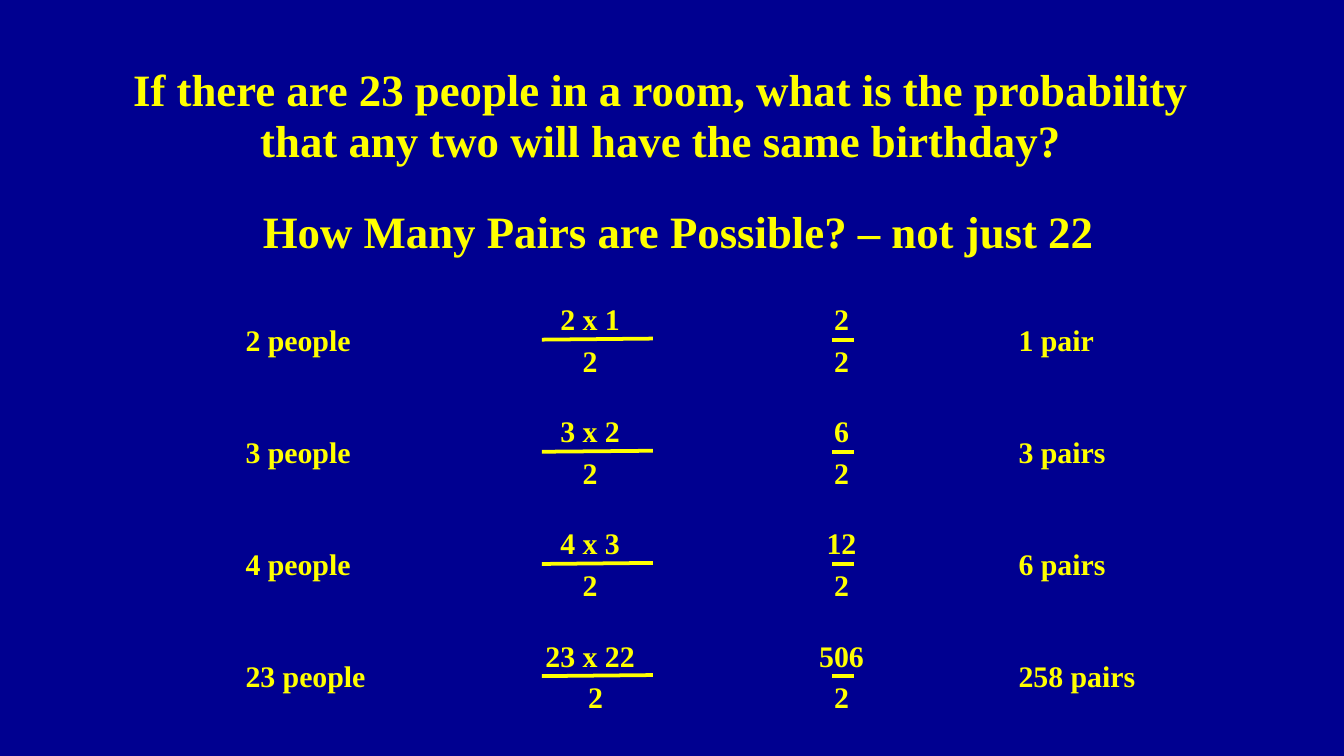
from lxml.etree import SubElement
from pptx import Presentation
from pptx.dml.color import RGBColor
from pptx.enum.shapes import MSO_CONNECTOR as Link
from pptx.enum.text import MSO_AUTO_SIZE as Fit, PP_ALIGN as Align
from pptx.oxml.ns import qn
from pptx.util import Cm, Pt

FONT = "Times New Roman"
BLUE, GOLD = "000090", "FFFF00"
EMS = {" ": 0.25, "l": 0.28, "i": 0.28, "r": 0.44, "e": 0.44, "s": 0.39, "p": 0.56}
LINE = 0.94
PITCH = 2.12
ROWS = [
    ("2 people", "2 x 1", "2", "1 pair", 0),
    ("3 people", "3 x 2", "6", "3 pairs", 0),
    ("4 people", "4 x 3", "12", "6 pairs", 0),
    ("23 people", "23 x 22", "506", "258 pairs", 0.1),
]


def tint(code):
    """Turn a hex string into a colour."""
    return RGBColor.from_string(code)


def span(text):
    """Return the width in cm of a 16 pt label with its insets."""
    return 0.51 + 0.564 * sum(EMS.get(mark, 0.5) for mark in text)


def write(slide, text, box, size, wrap=False):
    """Add a bold gold text box and return its paragraph."""
    frame = slide.shapes.add_textbox(*map(Cm, box)).text_frame
    frame.word_wrap = wrap
    frame.auto_size = Fit.SHAPE_TO_FIT_TEXT
    para = frame.paragraphs[0]
    para.text = text
    font = para.font
    font.name, font.size, font.bold = FONT, Pt(size), True
    font.color.rgb = tint(GOLD)
    return para


def title(slide, text, box):
    """Add a centred heading in the box."""
    para = write(slide, text, box, 24, True)
    para.alignment = Align.CENTER
    para.line_spacing = 0.95


def label(slide, text, left, top):
    """Add a one-line label at its left edge."""
    write(slide, text, (left, top, span(text), LINE), 16)


def ratio(slide, over, under, box, mid, shift=0, rise=0):
    """Stack a fraction around mid, with a bar as wide as the box."""
    left, top, width = box
    label(slide, over, mid - span(over) / 2, top)
    label(slide, under, mid + shift - span(under) / 2, top + 0.79)
    ends = (left, top + 0.86, left + width, top + 0.86 - rise)
    bar = slide.shapes.add_connector(Link.STRAIGHT, *map(Cm, ends))
    bar.line.color.rgb = tint(GOLD)
    bar.line.width = Pt(2)
    SubElement(bar._element.spPr, qn("a:effectLst"))


def row(slide, data, left, top):
    """Lay out one line of the pair count."""
    people, product, total, pairs, shift = data
    label(slide, people, left, top + 0.39)
    ratio(slide, product, "2", (left + 5.85, top, 2.1), left + 6.77, shift, 0.02)
    ratio(slide, total, "2", (left + 11.33, top, 0.43), left + 11.52)
    label(slide, pairs, left + 14.61, top + 0.39)


def main():
    """Build and save the slide."""
    deck = Presentation()
    deck.slide_width, deck.slide_height = Cm(25.4), Cm(14.29)
    slide = deck.slides.add_slide(deck.slide_layouts[6])
    fill = slide.background.fill
    fill.solid()
    fill.fore_color.rgb = tint(BLUE)
    title(
        slide,
        "If there are 23 people in a room, what is the probability "
        "that any two will have the same birthday?",
        (1.47, 1.12, 22.02, 2.21),
    )
    title(slide, "How Many Pairs are Possible? – not just 22", (2.97, 3.81, 19.69, 1.24))
    for step, data in enumerate(ROWS):
        row(slide, data, 4.39, 5.56 + step * PITCH)
    deck.save("out.pptx")


if __name__ == "__main__":
    main()
